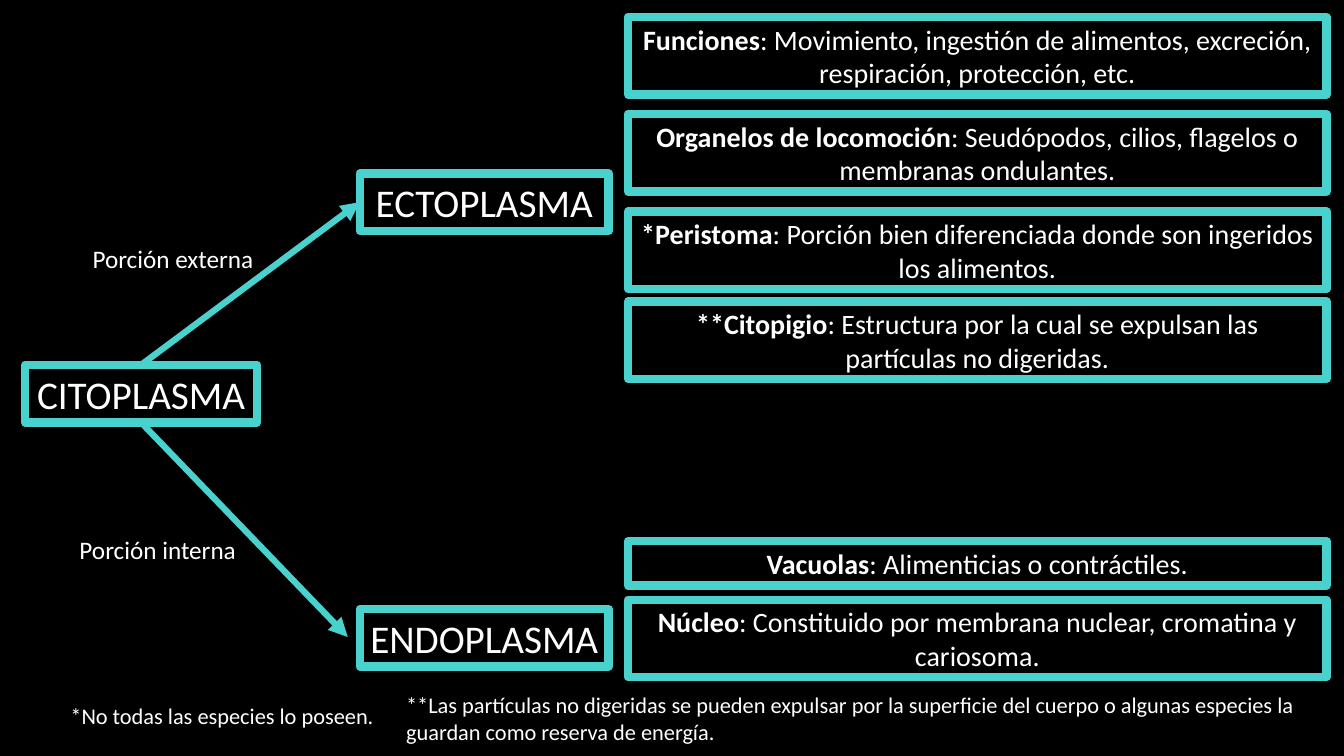
from dataclasses import dataclass

from lxml.etree import SubElement
from pptx import Presentation
from pptx.dml.color import RGBColor
from pptx.enum.shapes import MSO_CONNECTOR, MSO_SHAPE
from pptx.enum.text import MSO_ANCHOR, PP_ALIGN
from pptx.oxml.ns import qn
from pptx.util import Pt


@dataclass(frozen=True)
class Theme:
    background: RGBColor = RGBColor(0x00, 0x00, 0x00)
    text: RGBColor = RGBColor(0xFF, 0xFF, 0xFF)
    accent: RGBColor = RGBColor(0x49, 0xD1, 0xCD)
    font: str = "Calibri"
    heading_size: int = 28
    card_size: int = 20
    label_size: int = 18
    note_size: int = 16
    border: float = 6
    arrow: float = 4.5


class DiagramBuilder:
    def __init__(self, slide, theme):
        self.slide = slide
        self.theme = theme
        slide.background.fill.solid()
        slide.background.fill.fore_color.rgb = theme.background

    def add_text(self, shape, runs, size, alignment):
        paragraph = shape.text_frame.paragraphs[0]
        paragraph.alignment = alignment
        for text, bold in runs:
            run = paragraph.add_run()
            run.text = text
            run.font.name = self.theme.font
            run.font.size = Pt(size)
            run.font.bold = bold
            run.font.color.rgb = self.theme.text

    def box(self, left, top, width, height, runs, size, wrap=True):
        shape = self.slide.shapes.add_shape(
            MSO_SHAPE.RECTANGLE, Pt(left), Pt(top), Pt(width), Pt(height))
        shape.shadow.inherit = False
        shape.fill.background()
        shape.line.color.rgb = self.theme.accent
        shape.line.width = Pt(self.theme.border)
        shape.text_frame.word_wrap = wrap
        shape.text_frame.vertical_anchor = MSO_ANCHOR.MIDDLE
        self.add_text(shape, runs, size, PP_ALIGN.CENTER)
        return shape

    def heading(self, left, top, width, text):
        return self.box(left, top, width, 41.2, [(text, False)],
                        self.theme.heading_size, wrap=False)

    def card(self, top, height, term, definition):
        self.box(448.6, top, 499, height, [(term, True), (definition, False)],
                 self.theme.card_size)

    def caption(self, left, top, width, height, text, size, alignment):
        shape = self.slide.shapes.add_textbox(Pt(left), Pt(top), Pt(width), Pt(height))
        shape.text_frame.word_wrap = True
        self.add_text(shape, [(text, False)], size, alignment)

    def arrow(self, source, source_site, end_left, end_top):
        connector = self.slide.shapes.add_connector(
            MSO_CONNECTOR.STRAIGHT, Pt(0), Pt(0), Pt(end_left), Pt(end_top))
        connector.begin_connect(source, source_site)
        connector.line.color.rgb = self.theme.accent
        connector.line.width = Pt(self.theme.arrow)
        properties = connector._element.spPr
        SubElement(properties.get_or_add_ln(), qn("a:tailEnd"), type="triangle")
        SubElement(properties, qn("a:effectLst"))
        return connector


def main():
    presentation = Presentation()
    presentation.slide_width = Pt(960)
    presentation.slide_height = Pt(540)
    slide = presentation.slides.add_slide(presentation.slide_layouts[6])
    theme = Theme()
    diagram = DiagramBuilder(slide, theme)

    cytoplasm = diagram.heading(18, 260.6, 165.6, "CITOPLASMA")
    diagram.heading(257, 434.9, 177.8, "ENDOPLASMA")
    ectoplasm = diagram.heading(257, 123.8, 177.8, "ECTOPLASMA")

    top_site, left_site, bottom_site = 0, 1, 2
    outer_arrow = diagram.arrow(cytoplasm, top_site, 257, 144.4)
    outer_arrow.end_connect(ectoplasm, left_site)
    diagram.arrow(cytoplasm, bottom_site, 248.4, 455)

    for left, top, text in [(59, 170.6, "Porción externa"), (49.7, 378, "Porción interna")]:
        diagram.caption(left, top, 134, 29, text, theme.label_size, PP_ALIGN.JUSTIFY)

    one_line, two_lines = 31.7, 55.4
    cards = [
        (12.2, two_lines, "Funciones",
         ": Movimiento, ingestión de alimentos, excreción, respiración, protección, etc."),
        (81.4, two_lines, "Organelos de locomoción",
         ": Seudópodos, cilios, flagelos o membranas ondulantes."),
        (151.2, two_lines, "*Peristoma",
         ": Porción bien diferenciada donde son ingeridos los alimentos."),
        (215.3, two_lines, "**Citopigio",
         ": Estructura por la cual se expulsan las partículas no digeridas."),
        (386.6, one_line, "Vacuolas", ": Alimenticias o contráctiles."),
        (428.4, two_lines, "Núcleo",
         ": Constituido por membrana nuclear, cromatina y cariosoma."),
    ]
    for card in cards:
        diagram.card(*card)

    notes = [
        (43.2, 498.2, 262, 26.6, "*No todas las especies lo poseen."),
        (283, 490.3, 671, 46,
         "**Las partículas no digeridas se pueden expulsar por la superficie del cuerpo "
         "o algunas especies la guardan como reserva de energía."),
    ]
    for note in notes:
        diagram.caption(*note, theme.note_size, PP_ALIGN.LEFT)

    presentation.save("out.pptx")


if __name__ == "__main__":
    main()
